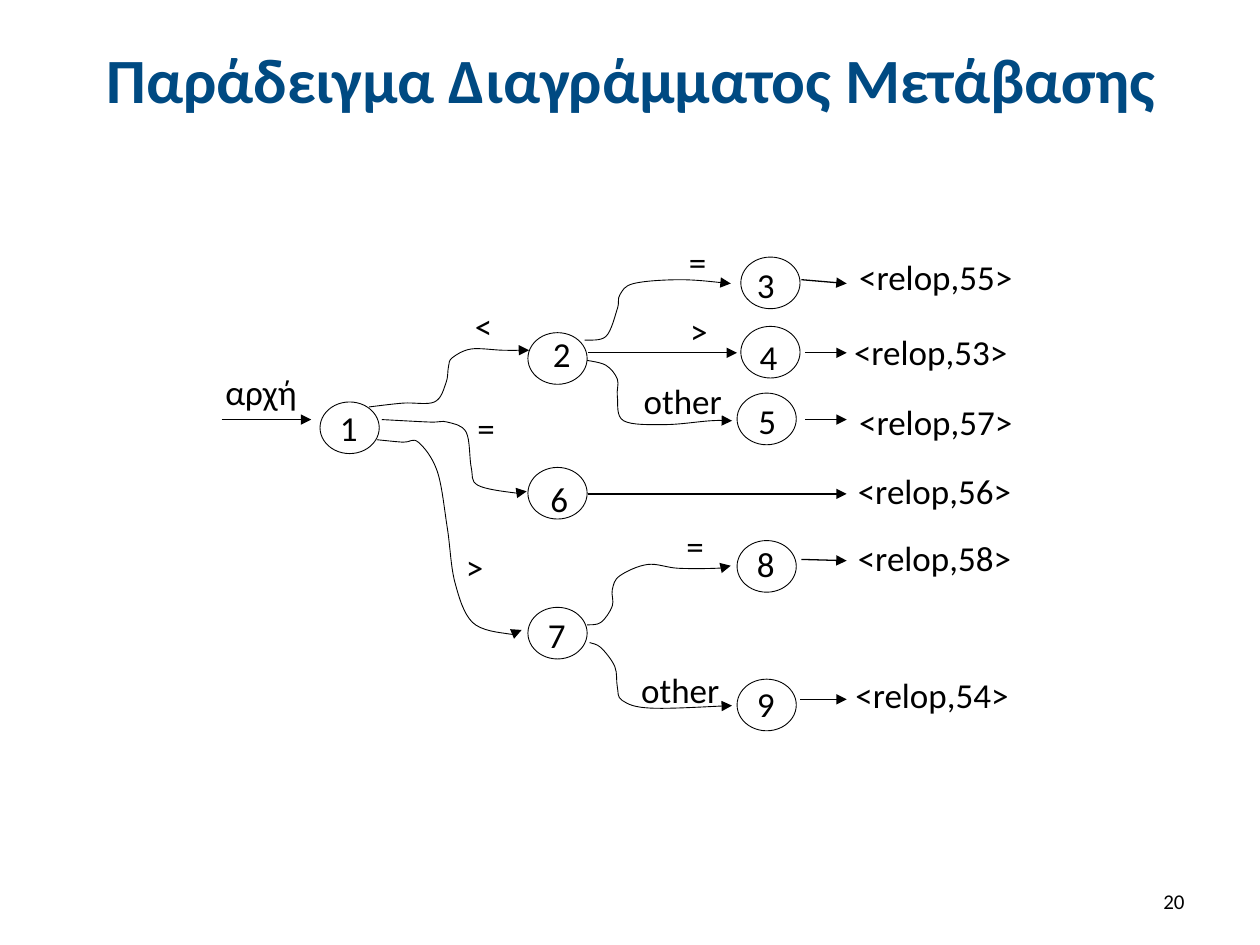
import pptx
import pptx.dml.color
import pptx.enum.shapes
import pptx.enum.text
import pptx.oxml
import pptx.oxml.ns
import pptx.util
from lxml import etree

Cm = pptx.util.Cm
UNIT = Cm(0.0254)
TITLE_BLUE = "004A82"
BLACK = "000000"
STATE_SIZE = (47, 41)

STATES = [
    ("1", (104, 169), (110, 168)),
    ("2", (269, 114), (279, 109)),
    ("3", (438, 54), (441, 54)),
    ("4", (438, 109), (443, 111)),
    ("5", (435, 162), (442, 162)),
    ("6", (269, 221), (277, 224)),
    ("7", (269, 332), (275, 332)),
    ("8", (435, 279), (441, 276)),
    ("9", (435, 389), (441, 387)),
]
ARROWS = [
    ((26, 183), (97, 183)),
    ((317, 242), (522, 242)),
    ((317, 130), (435, 130)),
    ((489, 130), (522, 130)),
    ((486, 72), (522, 75)),
    ((486, 294), (522, 295)),
    ((485, 405), (522, 405)),
    ((489, 183), (522, 183)),
]
CURVES = [
    [(143, 173), (170, 170), (195, 169), (204, 154), (206, 141), (209, 134), (224, 127), (249, 128), (270, 128)],
    [(153, 183), (191, 185), (205, 185), (220, 193), (224, 221), (229, 235), (257, 241), (268, 240)],
    [(149, 199), (170, 201), (182, 201), (197, 224), (205, 269), (211, 312), (225, 344), (253, 353), (264, 350)],
    [(314, 120), (331, 117), (340, 95), (342, 84), (353, 75), (390, 72), (430, 75)],
    [(316, 136), (331, 140), (340, 151), (340, 165), (345, 184), (378, 187), (414, 184), (431, 184)],
    [(316, 346), (327, 344), (336, 331), (336, 318), (342, 307), (364, 298), (388, 301), (419, 301), (430, 299)],
    [(318, 360), (327, 364), (338, 379), (340, 395), (344, 406), (367, 412), (431, 410)],
]
LABELS = [
    ("<relop,55>", 522, 48, 173),
    ("<relop,53>", 518, 107, 173),
    ("<relop,57>", 522, 163, 173),
    ("<relop,56>", 521, 218, 173),
    ("<relop,58>", 521, 271, 173),
    ("<relop,54>", 519, 380, 173),
    ("other", 351, 146, 87),
    ("other", 349, 376, 87),
    (">", 210, 278, 47),
    ("<", 217, 87, 47),
    ("=", 387, 36, 47),
    (">", 388, 91, 47),
    ("αρχή", 19, 139, 92),
    ("=", 219, 168, 47),
    ("=", 385, 261, 47),
]


def color(hex_string):
    return pptx.dml.color.RGBColor.from_string(hex_string)


def format_text(text_frame, size, hex_string, alignment, bold=False):
    paragraph = text_frame.paragraphs[0]
    paragraph.alignment = alignment
    font = paragraph.runs[0].font
    font.name = "Calibri"
    font.size = pptx.util.Pt(size)
    font.bold = bold
    font.color.rgb = color(hex_string)


def format_line(shape, width, arrow=False):
    shape.line.color.rgb = color(BLACK)
    shape.line.width = pptx.util.Pt(width)
    if arrow:
        line = shape.line._get_or_add_ln()
        etree.SubElement(line, pptx.oxml.ns.qn("a:tailEnd"), type="triangle")


def add_title(slide, left, top, width, height):
    title = slide.shapes.title
    title.left, title.top, title.width, title.height = left, top, width, height
    title.text_frame.text = "Παράδειγμα Διαγράμματος Μετάβασης"
    title.text_frame.vertical_anchor = pptx.enum.text.MSO_ANCHOR.MIDDLE
    format_text(title.text_frame, 36, TITLE_BLUE, pptx.enum.text.PP_ALIGN.CENTER, True)


def add_page_number(slide, left, top, width, height):
    text_frame = slide.shapes.add_textbox(left, top, width, height).text_frame
    text_frame.word_wrap = True
    text_frame.text = "20"
    text_frame.vertical_anchor = pptx.enum.text.MSO_ANCHOR.MIDDLE
    format_text(text_frame, 12, BLACK, pptx.enum.text.PP_ALIGN.RIGHT)


def smooth(shape):
    qn = pptx.oxml.ns.qn
    nodes = list(shape._element.iter(qn("a:moveTo"), qn("a:lnTo")))
    knots = [(int(node[0].get("x")), int(node[0].get("y"))) for node in nodes]
    padded = [knots[0]] + knots + [knots[-1]]
    for index, node in enumerate(nodes[1:]):
        before, start, end, after = padded[index:index + 4]
        first = [s + (e - b) / 6 for b, s, e in zip(before, start, end)]
        second = [e - (a - s) / 6 for s, e, a in zip(start, end, after)]
        node.tag = qn("a:cubicBezTo")
        node.remove(node[0])
        for x, y in (first, second, end):
            etree.SubElement(node, qn("a:pt"), x=str(round(x)), y=str(round(y)))


def add_transition_diagram(slide, left, top):
    def place(x, y):
        return left + x * UNIT, top + y * UNIT

    def add_label(text, x, y, width):
        box = slide.shapes.add_textbox(*place(x, y), width * UNIT, 44 * UNIT)
        box.text_frame.word_wrap = True
        box.text_frame.text = text
        format_text(box.text_frame, 20, BLACK, pptx.enum.text.PP_ALIGN.LEFT)

    for number, corner, label_corner in STATES:
        size = [length * UNIT for length in STATE_SIZE]
        state = slide.shapes.add_shape(pptx.enum.shapes.MSO_SHAPE.OVAL, *place(*corner), *size)
        state.shadow.inherit = False
        state.fill.background()
        format_line(state, 0.5)
        add_label(number, *label_corner, 43)

    for start, end in ARROWS:
        arrow = slide.shapes.add_connector(
            pptx.enum.shapes.MSO_CONNECTOR.STRAIGHT, *place(*start), *place(*end))
        format_line(arrow, 0.75, True)
        etree.SubElement(arrow._element.spPr, pptx.oxml.ns.qn("a:effectLst"))

    for knots in CURVES:
        builder = slide.shapes.build_freeform(*place(*knots[0]))
        builder.add_line_segments([place(*knot) for knot in knots[1:]], close=False)
        curve = builder.convert_to_shape()
        smooth(curve)
        curve.shadow.inherit = False
        curve.fill.background()
        format_line(curve, 0.5, True)

    for text, x, y, width in LABELS:
        add_label(text, x, y, width)


def main():
    presentation = pptx.Presentation()
    presentation.slide_width, presentation.slide_height = Cm(25.4), Cm(19.05)
    slide = presentation.slides.add_slide(presentation.slide_layouts[5])
    add_title(slide, Cm(1.3), Cm(0.33), Cm(22.86), Cm(2.51))
    add_transition_diagram(slide, Cm(3.81), Cm(3.81))
    add_page_number(slide, Cm(18.21), Cm(17.65), Cm(5.92), Cm(1.02))
    presentation.save("out.pptx")


if __name__ == "__main__":
    main()
